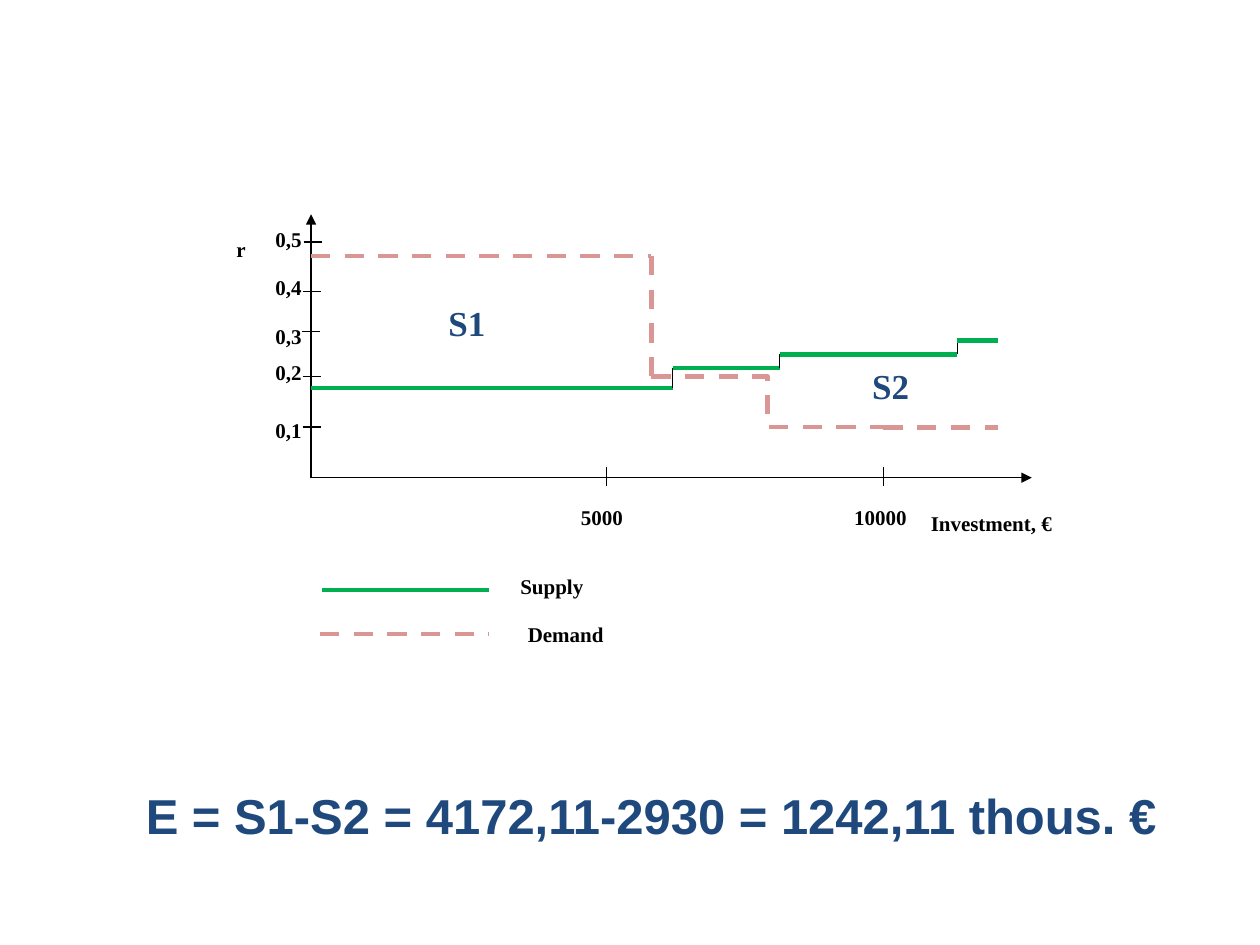
from dataclasses import dataclass
from itertools import pairwise

import pptx
import pptx.dml.color
import pptx.enum.dml
import pptx.enum.shapes
import pptx.enum.text
import pptx.oxml
import pptx.oxml.ns
import pptx.util

Cm = pptx.util.Cm
Pt = pptx.util.Pt
ALIGN = pptx.enum.text.PP_ALIGN
KIND = pptx.enum.shapes.MSO_CONNECTOR

COLORS = {
    "ink": "000000",
    "paper": "FFFFFF",
    "supply": "00B050",
    "demand": "D99694",
    "accent": "1F497D",
}


@dataclass
class Line:
    x1: float
    y1: float
    x2: float
    y2: float
    color: str = "ink"
    width: float = 0.75
    dashed: bool = False
    arrow: bool = False
    bent: bool = False


@dataclass
class Label:
    text: str
    x: float
    y: float
    w: float
    h: float = 0.71
    align: ALIGN = ALIGN.LEFT
    size: int = 12
    color: str = "ink"


def rgb(name: str) -> pptx.dml.color.RGBColor:
    return pptx.dml.color.RGBColor.from_string(COLORS[name])


def add_run(p, text: str, font: str, size: int, color: str) -> None:
    r = p.add_run()
    r.text = text
    r.font.name = font
    r.font.size = Pt(size)
    r.font.bold = True
    r.font.color.rgb = rgb(color)


def draw_line(s, line: Line) -> None:
    kind = KIND.ELBOW if line.bent else KIND.STRAIGHT
    c = s.shapes.add_connector(kind, Cm(line.x1), Cm(line.y1), Cm(line.x2), Cm(line.y2))
    c.line.color.rgb = rgb(line.color)
    c.line.width = Pt(line.width)
    if line.dashed:
        c.line.dash_style = pptx.enum.dml.MSO_LINE.DASH
    if line.arrow:
        tail = pptx.oxml.parse_xml(
            f'<a:tailEnd {pptx.oxml.ns.nsdecls("a")} type="triangle"/>'
        )
        c.line._get_or_add_ln().append(tail)
    c._element.spPr.append(
        pptx.oxml.parse_xml(f'<a:effectLst {pptx.oxml.ns.nsdecls("a")}/>')
    )


def draw_label(s, label: Label) -> None:
    sp = s.shapes.add_shape(
        pptx.enum.shapes.MSO_SHAPE.RECTANGLE,
        Cm(label.x), Cm(label.y), Cm(label.w), Cm(label.h),
    )
    sp.shadow.inherit = False
    sp.fill.solid()
    sp.fill.fore_color.rgb = rgb("paper")
    sp.line.color.rgb = rgb("paper")
    sp.line.width = Pt(0.75)
    tf = sp.text_frame
    tf.margin_left = tf.margin_right = tf.margin_top = tf.margin_bottom = 0
    tf.vertical_anchor = pptx.enum.text.MSO_ANCHOR.MIDDLE
    tf.word_wrap = True
    p = tf.paragraphs[0]
    p.alignment = label.align
    add_run(p, label.text, "Times New Roman", label.size, label.color)


def supply_lines(points: list[tuple[float, float]], end: float) -> list[Line]:
    lines = []
    for (x1, y1), (x2, y2) in pairwise(points):
        lines.append(Line(x1, y1, x2, y1, "supply", 2.75))
        lines.append(Line(x2, y1, x2, y2))
    x, y = points[-1]
    return lines + [Line(x, y, end, y, "supply", 2.75)]


def demand_line(x1: float, y1: float, x2: float, y2: float, bent: bool = False) -> Line:
    return Line(x1, y1, x2, y2, "demand", 2.75, dashed=True, bent=bent)


def main() -> None:
    prs = pptx.Presentation()
    prs.slide_width, prs.slide_height = Cm(25.4), Cm(19.05)
    s = prs.slides.add_slide(prs.slide_layouts[6])

    left, base, end = 6.27, 9.63, 20.12
    y_ticks = [
        ("0,1", 6.1, 8.61, 8.31),
        ("0,2", 6.1, 7.59, 7.14),
        ("0,3", 6.07, 6.68, 6.43),
        ("0,4", 6.1, 5.87, 5.44),
        ("0,5", 6.12, 4.88, 4.47),
    ]
    x_ticks = [("5000", 12.22, 11.71), ("10000", 17.81, 17.22)]

    lines = [
        Line(left, base, left, 4.32, arrow=True),
        Line(left, base, 20.8, base, arrow=True),
        demand_line(left, 5.16, 13.13, 5.16),
        demand_line(13.13, 5.16, 13.13, 7.59),
        demand_line(13.13, 7.59, 17.81, 8.61, bent=True),
        demand_line(17.81, 8.61, end, 8.61),
    ]
    lines += supply_lines([(left, 7.82), (13.56, 7.42), (15.72, 7.14), (19.3, 6.86)], end)
    lines += [Line(x, 9.42, x, 9.8) for _, x, _ in x_ticks]
    lines += [Line(x, y, x + 0.38, y) for _, x, y, _ in y_ticks]
    lines += [
        Line(6.5, 11.89, 9.86, 11.89, "supply", 2.5),
        demand_line(6.45, 12.78, 9.86, 12.78),
    ]

    labels = [
        Label("S1", 9.04, 6.15, 0.81, size=20, color="accent"),
        Label("S2", 17.58, 7.42, 0.81, size=20, color="accent"),
    ]
    labels += [Label(text, x, 10.08, 1.17) for text, _, x in x_ticks]
    labels.append(Label("Investment, €", 18.39, 9.8, 2.82, 1.5, ALIGN.RIGHT))
    labels += [Label(text, 5.44, y, 0.64, align=ALIGN.RIGHT) for text, _, _, y in y_ticks]
    labels += [
        Label("Supply", 10.49, 11.53, 4.19, 0.56),
        Label("Demand", 10.64, 12.5, 4.19, 0.56),
    ]

    draw_label(s, Label("r", 4.29, 4.32, 1.14, 1.4, ALIGN.CENTER))
    for line in lines:
        draw_line(s, line)
    for label in labels:
        draw_label(s, label)

    tf = s.shapes.add_textbox(Cm(2.69), Cm(15.72), Cm(21.13), Cm(1.45)).text_frame
    tf.word_wrap = False
    tf.auto_size = pptx.enum.text.MSO_AUTO_SIZE.SHAPE_TO_FIT_TEXT
    add_run(
        tf.paragraphs[0],
        "Е = S1-S2 = 4172,11-2930 = 1242,11 thous. €",
        "Arial", 28, "accent",
    )

    prs.save("out.pptx")


if __name__ == "__main__":
    main()
